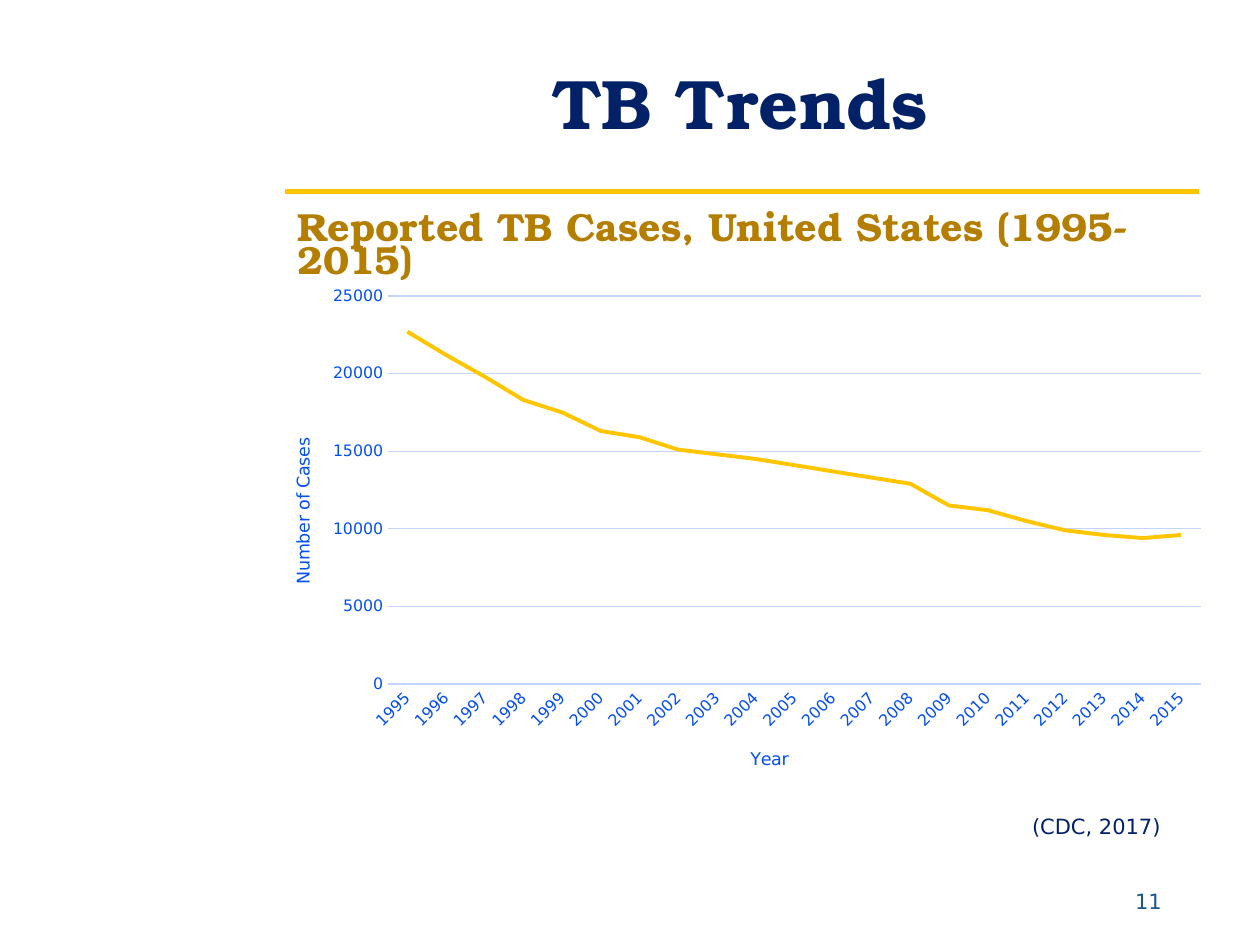
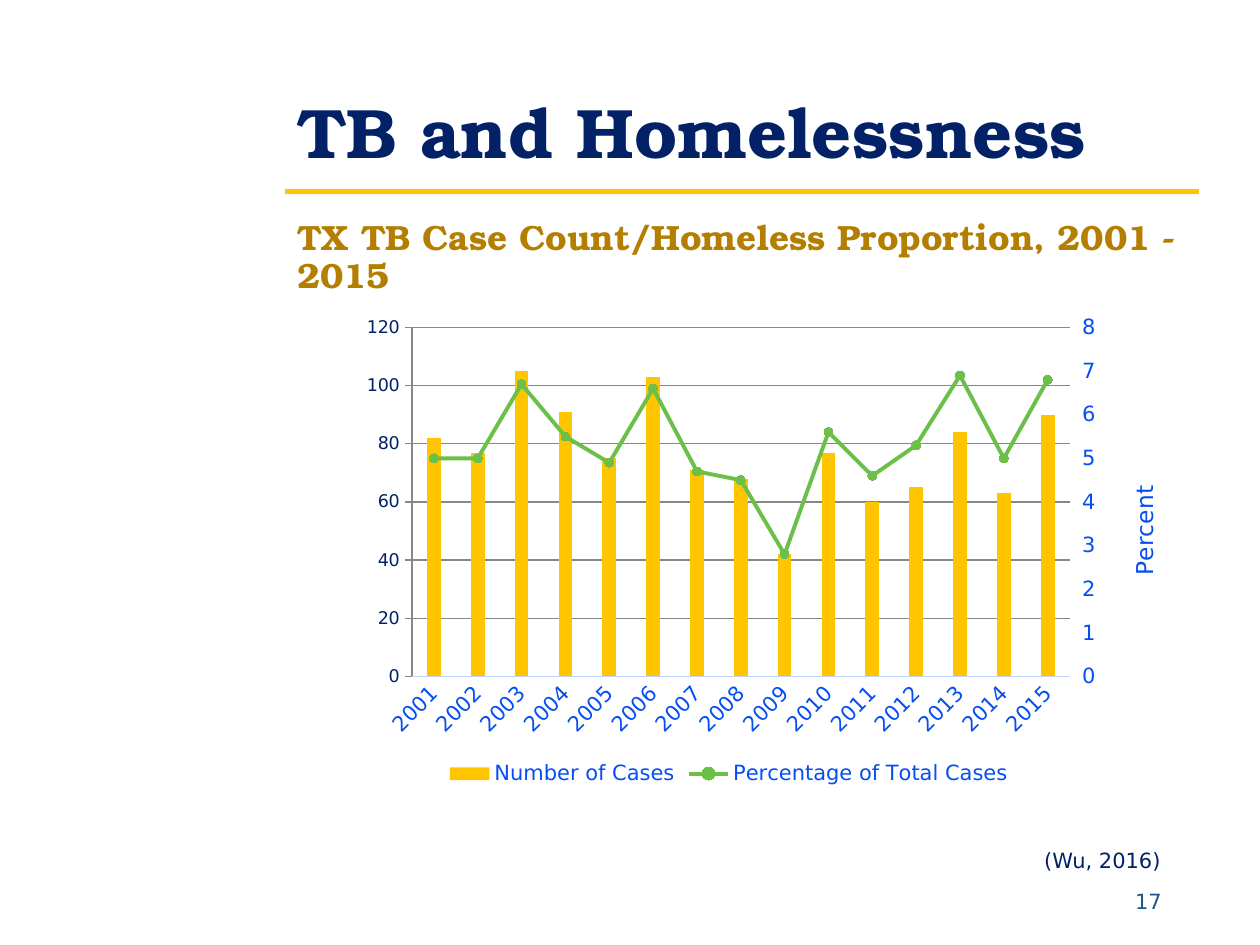
from dataclasses import dataclass

from lxml import etree
from pptx import Presentation
from pptx.chart.axis import ValueAxis
from pptx.chart.data import CategoryChartData
from pptx.dml.color import RGBColor
from pptx.enum.chart import XL_CHART_TYPE as CHART
from pptx.enum.chart import XL_LEGEND_POSITION as LEGEND
from pptx.enum.chart import XL_MARKER_STYLE as MARKER
from pptx.enum.chart import XL_TICK_MARK as TICK
from pptx.enum.shapes import MSO_CONNECTOR as CONNECTOR
from pptx.enum.text import MSO_ANCHOR as ANCHOR
from pptx.enum.text import MSO_AUTO_SIZE as AUTO_SIZE
from pptx.enum.text import PP_ALIGN as ALIGN
from pptx.oxml import parse_xml
from pptx.oxml.ns import qn
from pptx.util import Pt

EMU_PER_PX = 9144
CHART_NS = "http://schemas.openxmlformats.org/drawingml/2006/chart"
LINE_PLOT = f"""<c:lineChart xmlns:c="{CHART_NS}">
<c:grouping val="standard"/><c:varyColors val="0"/>
<c:marker val="1"/><c:axId val="5001"/><c:axId val="5002"/></c:lineChart>"""
RIGHT_AXIS = f"""<c:valAx xmlns:c="{CHART_NS}"><c:axId val="5002"/>
<c:scaling><c:orientation val="minMax"/></c:scaling><c:delete val="0"/>
<c:axPos val="r"/><c:numFmt formatCode="General" sourceLinked="0"/>
<c:majorTickMark val="out"/><c:minorTickMark val="none"/>
<c:tickLblPos val="nextTo"/><c:crossAx val="5001"/><c:crosses val="max"/></c:valAx>"""
HIDDEN_AXIS = f"""<c:catAx xmlns:c="{CHART_NS}"><c:axId val="5001"/>
<c:scaling><c:orientation val="minMax"/></c:scaling><c:delete val="1"/>
<c:axPos val="b"/><c:crossAx val="5002"/><c:crosses val="autoZero"/></c:catAx>"""


@dataclass(frozen=True)
class Theme:
    """Fonts, colours and type sizes shared by the slides."""
    heading: str = "TeX Gyre Bonum"
    text: str = "DejaVu Sans"
    navy: str = "022167"
    gold: str = "FFC600"
    ochre: str = "B47E00"
    blue: str = "054EF2"
    pale: str = "C3D5FE"
    green: str = "6CC04A"
    number: str = "1A578E"
    title_size: float = 40
    note_size: float = 12


THEME = Theme()


def px(value):
    """Turn px into EMU."""
    return value * EMU_PER_PX


def style_font(font, size, color, name=THEME.text, bold=False):
    """Set the look of a font."""
    font.name, font.size, font.bold = name, Pt(size), bold
    font.color.rgb = RGBColor.from_string(color)


def style_line(line, color, width):
    """Set the colour and width of a line."""
    line.color.rgb = RGBColor.from_string(color)
    line.width = Pt(width)


def fill_text(sp, box, text, size, color, name=THEME.text, bold=False,
              align=ALIGN.LEFT, anchor=ANCHOR.TOP, spacing=1.0):
    """Place a shape and give it one formatted paragraph."""
    sp.left, sp.top, sp.width, sp.height = map(px, box)
    tf = sp.text_frame
    tf.text = text
    tf.word_wrap, tf.auto_size, tf.vertical_anchor = True, AUTO_SIZE.NONE, anchor
    p = tf.paragraphs[0]
    p.alignment, p.line_spacing, p.space_before = align, spacing, Pt(0)
    style_font(p.runs[0].font, size, color, name, bold)
    return p


def add_note(slide, box, text, color, anchor=ANCHOR.TOP):
    """Add a small right-aligned text."""
    sp = slide.shapes.add_textbox(*map(px, box))
    fill_text(sp, box, text, THEME.note_size, color, align=ALIGN.RIGHT, anchor=anchor)


def add_rule(slide):
    """Draw the gold rule under the title."""
    line = slide.shapes.add_connector(CONNECTOR.STRAIGHT, px(226), px(152), px(952), px(152))
    style_line(line.line, THEME.gold, 3)
    etree.SubElement(line._element.spPr, qn("a:effectLst"))


def add_page(prs, title, title_box, title_align, subtitle, subtitle_top,
             subtitle_size, subtitle_spacing, source, source_top, number):
    """Add a slide with its rule, heading, subtitle, source and number."""
    slide = prs.slides.add_slide(prs.slide_layouts[1])
    add_rule(slide)
    fill_text(slide.shapes.title, title_box, title, THEME.title_size, THEME.navy,
              THEME.heading, True, title_align, ANCHOR.BOTTOM, 0.9)
    p = fill_text(slide.placeholders[1], (226, subtitle_top, 725, 60), subtitle,
                  subtitle_size, THEME.ochre, THEME.heading, True,
                  spacing=subtitle_spacing)
    pPr = p._p.get_or_add_pPr()
    pPr.set("marL", "0")
    pPr.set("indent", "0")
    etree.SubElement(pPr, qn("a:buNone"))
    add_note(slide, (809, 695, 123, 40), number, THEME.number, ANCHOR.MIDDLE)
    add_note(slide, (499, source_top, 432, 30), source, THEME.navy)
    return slide


def set_layout(parent, frame, spot):
    """Fix a chart part at a slide position, with a size if one is given."""
    layout = parent.find(qn("c:layout"))
    if layout is None:
        layout = etree.Element(qn("c:layout"))
        parent.insert(0 if parent.find(qn("c:tx")) is None else 1, layout)
    manual = etree.SubElement(layout, qn("c:manualLayout"))
    left, top, width, height = frame
    values = [("xMode", "edge"), ("yMode", "edge"),
              ("x", (spot[0] - left) / width), ("y", (spot[1] - top) / height)]
    if len(spot) == 4:
        values.insert(0, ("layoutTarget", "inner"))
        values += [("w", spot[2] / width), ("h", spot[3] / height)]
    for name, value in values:
        etree.SubElement(manual, qn(f"c:{name}")).set("val", str(value))


def add_chart(slide, kind, frame, plot_box, cats, series):
    """Add a chart with a fixed plot area."""
    data = CategoryChartData()
    data.categories = [str(year) for year in cats]
    for name, values in series:
        data.add_series(name, values)
    chart = slide.shapes.add_chart(kind, *map(px, frame), data).chart
    chart.has_title = chart.has_legend = False
    style_font(chart.font, 10, THEME.navy)
    chart.plots[0].vary_by_categories = False
    set_layout(chart.element.find(".//" + qn("c:plotArea")), frame, plot_box)
    return chart


def style_axis(axis, size, tick=TICK.NONE):
    """Set the labels and tick marks of an axis."""
    style_font(axis.tick_labels.font, size, THEME.blue)
    axis.major_tick_mark, axis.minor_tick_mark = tick, TICK.NONE


def style_category_axis(axis, size):
    """Slant the year labels over a pale axis line."""
    style_axis(axis, size)
    axis.has_major_gridlines = False
    style_line(axis.format.line, THEME.pale, 0.75)
    body = axis._element.find(qn("c:txPr")).find(qn("a:bodyPr"))
    body.set("rot", "-2700000")
    body.set("vert", "horz")


def style_value_axis(axis, size, top, step, tick=TICK.NONE, grid=True):
    """Scale a value axis and draw its gridlines without an axis line."""
    style_axis(axis, size, tick)
    axis.minimum_scale, axis.maximum_scale, axis.major_unit = 0, top, step
    axis.format.line.fill.background()
    axis.has_major_gridlines = grid
    if grid:
        style_line(axis.major_gridlines.format.line, THEME.pale, 0.75)


def title_axis(axis, text, size, frame, spot, rotation=-90):
    """Write an axis title at a fixed position."""
    tf = axis.axis_title.text_frame
    tf.text = text
    style_font(tf.paragraphs[0].runs[0].font, size, THEME.blue)
    title = axis._element.find(qn("c:title"))
    body = title.find(".//" + qn("a:bodyPr"))
    body.set("rot", str(rotation * 60000))
    body.set("vert", "horz")
    set_layout(title, frame, spot)


def style_line_series(series, color):
    """Draw a series as straight line segments."""
    series.smooth = False
    style_line(series.format.line, color, 2.25)


def move_to_right_axis(chart):
    """Turn the last column series into a line and return its right axis."""
    area = chart.element.find(".//" + qn("c:plotArea"))
    bars = area.find(qn("c:barChart"))
    ser = bars.findall(qn("c:ser"))[-1]
    for flag in ser.findall(qn("c:invertIfNegative")):
        ser.remove(flag)
    lines = parse_xml(LINE_PLOT)
    bars.addnext(lines)
    lines.find(qn("c:varyColors")).addnext(ser)
    right = parse_xml(RIGHT_AXIS)
    area.findall(qn("c:valAx"))[-1].addnext(right)
    right.addnext(parse_xml(HIDDEN_AXIS))
    return ValueAxis(right)


def add_trend_chart(slide):
    """Add the line chart of reported cases."""
    frame = (207, 220, 761, 408)
    cases = [22700, 21200, 19800, 18300, 17500, 16300, 15900, 15100, 14800, 14500, 14100,
             13700, 13300, 12900, 11500, 11200, 10500, 9900, 9600, 9400, 9600]
    chart = add_chart(slide, CHART.LINE, frame, (308, 235, 645, 308),
                      range(1995, 2016), [("Series 1", cases)])
    style_line_series(chart.plots[0].series[0], THEME.gold)
    style_category_axis(chart.category_axis, 9)
    style_value_axis(chart.value_axis, 9, 25000, 5000)
    title_axis(chart.category_axis, "Year", 10, frame, (593, 591), 0)
    title_axis(chart.value_axis, "Number of Cases", 10, frame, (229, 345))


def add_homelessness_chart(slide):
    """Add the columns of case counts with the line of percentages."""
    frame = (226, 243, 705, 385)
    counts = [82, 77, 105, 91, 75, 103, 71, 68, 42, 77, 60, 65, 84, 63, 90]
    shares = [5, 5, 6.7, 5.5, 4.9, 6.6, 4.7, 4.5, 2.8, 5.6, 4.6, 5.3, 6.9, 5, 6.8]
    chart = add_chart(slide, CHART.COLUMN_CLUSTERED, frame, (327, 260, 522, 277),
                      range(2001, 2016),
                      [("Number of Cases", counts), ("Percentage of Total Cases", shares)])
    right_axis = move_to_right_axis(chart)
    columns, lines = chart.plots
    columns.gap_width, columns.overlap = 219, -27
    fill = columns.series[0].format.fill
    fill.solid()
    fill.fore_color.rgb = RGBColor.from_string(THEME.gold)
    share = lines.series[0]
    style_line_series(share, THEME.green)
    share.marker.style, share.marker.size = MARKER.CIRCLE, 5
    share.marker.format.fill.solid()
    share.marker.format.fill.fore_color.rgb = RGBColor.from_string(THEME.green)
    style_line(share.marker.format.line, THEME.green, 0.75)
    style_category_axis(chart.category_axis, 12)
    style_value_axis(chart.value_axis, 12, 120, 20)
    style_value_axis(right_axis, 12, 8, 1, TICK.OUTSIDE, False)
    title_axis(chart.value_axis, "Count", 13.3, frame, (251, 390))
    title_axis(right_axis, "Percent", 13.3, frame, (892, 382))
    chart.has_legend = True
    chart.legend.position, chart.legend.include_in_layout = LEGEND.BOTTOM, False
    style_font(chart.legend.font, 12, THEME.blue)


def main():
    """Build both slides and save the file."""
    prs = Presentation()
    prs.slide_width, prs.slide_height = px(1000), px(750)
    slide = add_page(prs, "TB Trends", (225, 33, 725, 87), ALIGN.CENTER,
                     "Reported TB Cases, United States (1995- 2015)", 166, 22.4, 0.7,
                     "(CDC, 2017)", 641, "11")
    add_trend_chart(slide)
    slide = add_page(prs, "TB and Homelessness", (226, 56, 725, 87), ALIGN.LEFT,
                     "TX TB Case Count/Homeless Proportion, 2001 - 2015", 170, 20, 0.9,
                     "(Wu, 2016)", 668, "17")
    add_homelessness_chart(slide)
    prs.save("out.pptx")


if __name__ == "__main__":
    main()
